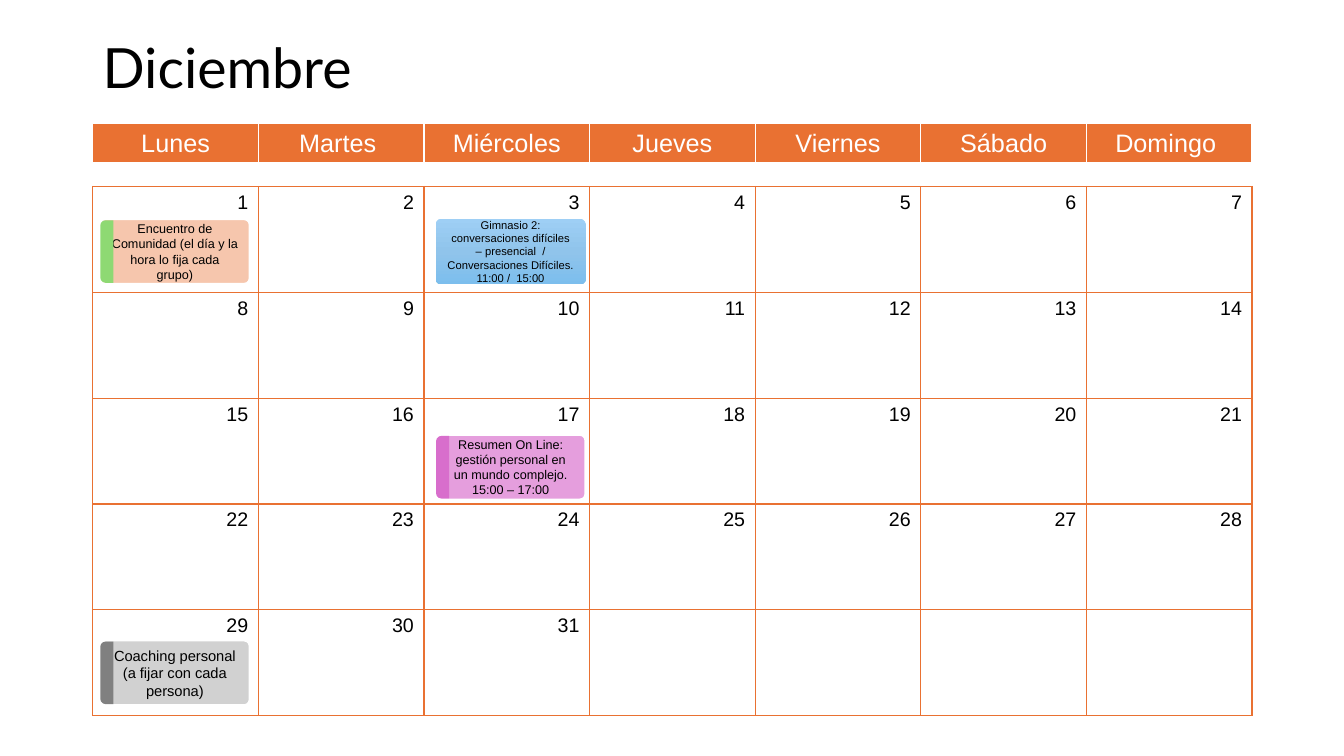
import copy

import pptx
import pptx.dml.color
import pptx.enum.shapes
import pptx.enum.text
import pptx.oxml
import pptx.oxml.ns
import pptx.util
from pptx.util import Inches

ALIGN = pptx.enum.text.PP_ALIGN
ANCHOR = pptx.enum.text.MSO_ANCHOR
SHAPE = pptx.enum.shapes.MSO_SHAPE


def rgb(color):
    return pptx.dml.color.RGBColor.from_string(color)


def write(tf, text, size=14, font="Arial", color="000000", align=ALIGN.LEFT, spacing=None):
    for i, line in enumerate(text.split("\n")):
        p = tf.add_paragraph() if i else tf.paragraphs[0]
        p.alignment = align
        p.line_spacing = spacing
        r = p.add_run()
        r.text = line
        r.font.size = pptx.util.Pt(size)
        r.font.name = font
        r.font.color.rgb = rgb(color)


class Calendar:
    accent = "E97132"
    white = "FFFFFF"
    left, width, days = 0.92, 11.5, 7
    event_w, event_h, event_adj = 1.49, 0.65, 0.089
    tab_w, tab_h = 0.62, 0.13

    def __init__(self, prs):
        self.s = prs.slides.add_slide(prs.slide_layouts[6])

    def title(self, text):
        sp = self.s.shapes.add_textbox(Inches(self.left), Inches(0.4), Inches(self.width), Inches(0.6))
        tf = sp.text_frame
        tf.word_wrap = True
        tf.vertical_anchor = ANCHOR.MIDDLE
        write(tf, text, size=39.6, font="Lato", spacing=0.9)

    def borders(self, cell, color, widths):
        tcPr = cell._tc.get_or_add_tcPr()
        for i, (side, width) in enumerate(zip("LRTB", widths)):
            ln = pptx.oxml.parse_xml(
                f'<a:ln{side} {pptx.oxml.ns.nsdecls("a")} w="{pptx.util.Pt(width)}">'
                f'<a:solidFill><a:srgbClr val="{color}"/></a:solidFill></a:ln{side}>')
            tcPr.insert(i, ln)

    def table(self, top, height, rows, border, widths, fill=None, anchor=ANCHOR.TOP, **fmt):
        frame = self.s.shapes.add_table(len(rows), self.days, Inches(self.left), Inches(top),
                                        Inches(self.width), Inches(height))
        table = frame.table
        table.first_row = table.horz_banding = False
        for col in table.columns:
            col.width = Inches(self.width / self.days)
        for r, row in enumerate(rows):
            for c, text in enumerate(row):
                cell = table.cell(r, c)
                cell.vertical_anchor = anchor
                if fill:
                    cell.fill.solid()
                    cell.fill.fore_color.rgb = rgb(fill)
                else:
                    cell.fill.background()
                self.borders(cell, border, widths)
                if text:
                    write(cell.text_frame, text, **fmt)

    def shape(self, shapes, kind, x, y, w, h, fill, adj, line=None):
        sp = shapes.add_shape(kind, Inches(x), Inches(y), Inches(w), Inches(h))
        sp.shadow.inherit = False
        for i, value in enumerate(adj):
            sp.adjustments[i] = value
        if isinstance(fill, str):
            sp.fill.solid()
            sp.fill.fore_color.rgb = rgb(fill)
        else:
            self.gradient(sp, fill)
        if line:
            sp.line.color.rgb = rgb(line)
            sp.line.width = pptx.util.Pt(2)
        else:
            sp.line.fill.background()
        return sp

    def gradient(self, sp, colors):
        sp.fill.gradient()
        sp.fill.gradient_angle = 270
        gs_list = sp._element.spPr.find(".//" + pptx.oxml.ns.qn("a:gsLst"))
        while len(gs_list) < len(colors):
            gs_list.append(copy.deepcopy(gs_list[0]))
        for i, (stop, color) in enumerate(zip(sp.fill.gradient_stops, colors)):
            stop.position = i / (len(colors) - 1)
            stop.color.rgb = rgb(color)

    def event(self, x, y, text, size, fill, tab=None):
        shapes = self.s.shapes.add_group_shape().shapes if tab else self.s.shapes
        sp = self.shape(shapes, SHAPE.ROUNDED_RECTANGLE, x, y, self.event_w, self.event_h,
                        fill, [self.event_adj], self.white if tab else None)
        tf = sp.text_frame
        tf.word_wrap = True
        tf.vertical_anchor = ANCHOR.MIDDLE
        write(tf, text, size=size, align=ALIGN.CENTER)
        if tab:
            tab_x = x + 0.07 - self.tab_w / 2
            tab_y = y + (self.event_h - self.tab_h) / 2
            sp = self.shape(shapes, SHAPE.ROUND_2_SAME_RECTANGLE, tab_x, tab_y,
                            self.tab_w, self.tab_h, tab, [0.4, 0])
            sp.rotation = 270


def main():
    prs = pptx.Presentation()
    prs.slide_width, prs.slide_height = Inches(13.33), Inches(7.5)
    cal = Calendar(prs)
    cal.title("Diciembre")

    weeks = [[str(d) if d <= 31 else "" for d in range(first, first + 7)]
             for first in range(1, 32, 7)]
    cal.table(1.85, 5.25, weeks, cal.accent, [1, 1, 1, 1], align=ALIGN.RIGHT)
    weekdays = ["Lunes", "Martes ", "Miércoles", "Jueves", "Viernes", "Sábado", "Domingo "]
    cal.table(1.22, 0.41, [weekdays], cal.white, [1, 1, 1, 3], fill=cal.accent,
              anchor=ANCHOR.MIDDLE, size=18, color=cal.white, align=ALIGN.CENTER)

    monday, wednesday = 0.99, 4.32
    cal.event(wednesday, 2.17, "Gimnasio 2: conversaciones difíciles – presencial  / "
              "Conversaciones Difíciles. 11:00 /  15:00", 8, ["9ECFF5", "90C4EB", "7CBEED"])
    cal.event(wednesday, 4.31, "Resumen On Line: gestión personal en un mundo complejo.\n"
              "15:00 – 17:00", 9, "E59EDD", "D86ECC")
    cal.event(monday, 6.35, "Coaching personal (a fijar con cada persona)", 10.5,
              "D1D1D1", "808080")
    cal.event(monday, 2.17, "Encuentro de Comunidad (el día y la hora lo fija cada grupo)", 9,
              "F6C6AD", "8ED973")
    prs.save("out.pptx")


if __name__ == "__main__":
    main()
